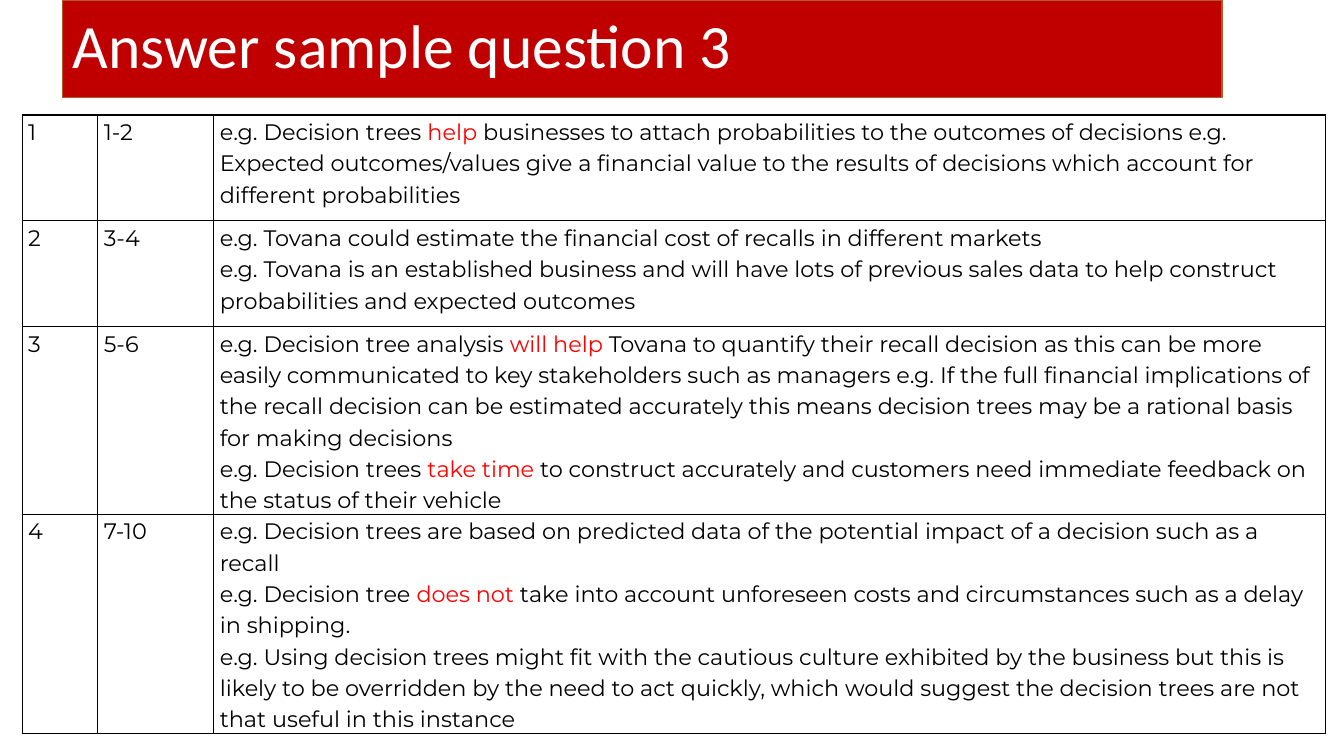
from lxml.etree import SubElement
from pptx import Presentation
from pptx.dml.color import RGBColor
from pptx.enum.text import MSO_ANCHOR, MSO_AUTO_SIZE, PP_ALIGN
from pptx.oxml.ns import qn
from pptx.util import Inches, Pt

BANNER_RED = RGBColor(0xC0, 0x00, 0x00)
BANNER_EDGE = RGBColor(0xAF, 0x5C, 0x24)
KEYWORD_RED = RGBColor(0xFF, 0x00, 0x00)
BLACK = RGBColor(0x00, 0x00, 0x00)
WHITE = RGBColor(0xFF, 0xFF, 0xFF)

HEADING = "Answer sample question 3"
# Each answer lists plain and highlighted text in turn.
LEVELS = [
    ("1", "1-2", [
        ("e.g. Decision trees ", "help",
         " businesses to attach probabilities to the outcomes of decisions e.g. "
         "Expected outcomes/values give a financial value to the results of decisions "
         "which account for different probabilities"),
    ]),
    ("2", "3-4", [
        ("e.g. Tovana could estimate the financial cost of recalls in different markets",),
        ("e.g. Tovana is an established business and will have lots of previous sales data "
         "to help construct probabilities and expected outcomes",),
    ]),
    ("3", "5-6", [
        ("e.g. Decision tree analysis ", "will help",
         " Tovana to quantify their recall decision as this can be more easily communicated "
         "to key stakeholders such as managers e.g. If the full financial implications of "
         "the recall decision can be estimated accurately this means decision trees may be "
         "a rational basis for making decisions"),
        ("e.g. Decision trees ", "take time ",
         "to construct accurately and customers need immediate feedback on the status of "
         "their vehicle"),
    ]),
    ("4", "7-10", [
        ("e.g. Decision trees are based on predicted data of the potential impact of a "
         "decision such as a recall",),
        ("e.g. Decision tree ", "does not",
         " take into account unforeseen costs and circumstances such as a delay in shipping."),
        ("e.g. Using decision trees might fit with the cautious culture exhibited by the "
         "business but this is likely to be overridden by the need to act quickly, which "
         "would suggest the decision trees are not that useful in this instance",),
    ]),
]
COLUMN_WIDTHS = [0.75, 1.15, 11.03]
ROW_HEIGHTS = [1.05, 1.05, 1.77, 1.81]


def set_font(font, name, size, color):
    """Apply a typeface, size and colour."""
    font.name, font.size = name, Pt(size)
    font.color.rgb = color


def add_heading(slide):
    """Turn the title placeholder into the red banner."""
    banner = slide.shapes.title
    banner.left, banner.top = Inches(0.62), Inches(0)
    banner.width, banner.height = Inches(11.5), Inches(0.97)
    banner.fill.solid()
    banner.fill.fore_color.rgb = BANNER_RED
    banner.line.color.rgb = BANNER_EDGE
    banner.line.width = Pt(1)
    frame = banner.text_frame
    frame.text = HEADING
    frame.auto_size = MSO_AUTO_SIZE.NONE
    frame.vertical_anchor = MSO_ANCHOR.MIDDLE
    heading = frame.paragraphs[0]
    heading.alignment = PP_ALIGN.LEFT
    heading.line_spacing = 0.9
    set_font(heading.font, "Calibri", 44, WHITE)


def add_borders(cell):
    """Draw a thin black line on every side of a cell."""
    properties = cell._tc.get_or_add_tcPr()
    for position, side in enumerate(("a:lnL", "a:lnR", "a:lnT", "a:lnB")):
        edge = SubElement(properties, qn(side), w=str(Pt(1)))
        color = SubElement(SubElement(edge, qn("a:solidFill")), qn("a:srgbClr"))
        color.set("val", str(BLACK))
        properties.insert(position, edge)


def fill_cell(cell, answers):
    """Write answers as paragraphs with highlighted keywords."""
    cell.margin_left = cell.margin_right = Inches(0.06)
    cell.margin_top = cell.margin_bottom = 0
    cell.fill.background()
    add_borders(cell)
    frame = cell.text_frame
    for number, answer in enumerate(answers):
        paragraph = frame.add_paragraph() if number else frame.paragraphs[0]
        paragraph.line_spacing = 1.15
        set_font(paragraph.font, "Montserrat", 16, BLACK)
        for position, phrase in enumerate(answer):
            run = paragraph.add_run()
            run.text = phrase
            if position % 2:
                run.font.color.rgb = KEYWORD_RED


def add_mark_scheme(slide):
    """Add the table of levels, marks and sample answers."""
    scheme = slide.shapes.add_table(
        len(LEVELS), len(COLUMN_WIDTHS), Inches(0.22), Inches(1.14),
        Inches(sum(COLUMN_WIDTHS)), Inches(sum(ROW_HEIGHTS))).table
    scheme.first_row = scheme.horz_banding = False
    for column, width in zip(scheme.columns, COLUMN_WIDTHS):
        column.width = Inches(width)
    for row, height, (level, marks, answers) in zip(scheme.rows, ROW_HEIGHTS, LEVELS):
        row.height = Inches(height)
        for cell, content in zip(row.cells, ([(level,)], [(marks,)], answers)):
            fill_cell(cell, content)


def main():
    """Build and save the slide."""
    deck = Presentation()
    deck.slide_width, deck.slide_height = Inches(13.33), Inches(7.5)
    slide = deck.slides.add_slide(deck.slide_layouts[5])
    add_heading(slide)
    add_mark_scheme(slide)
    deck.save("out.pptx")


if __name__ == "__main__":
    main()
